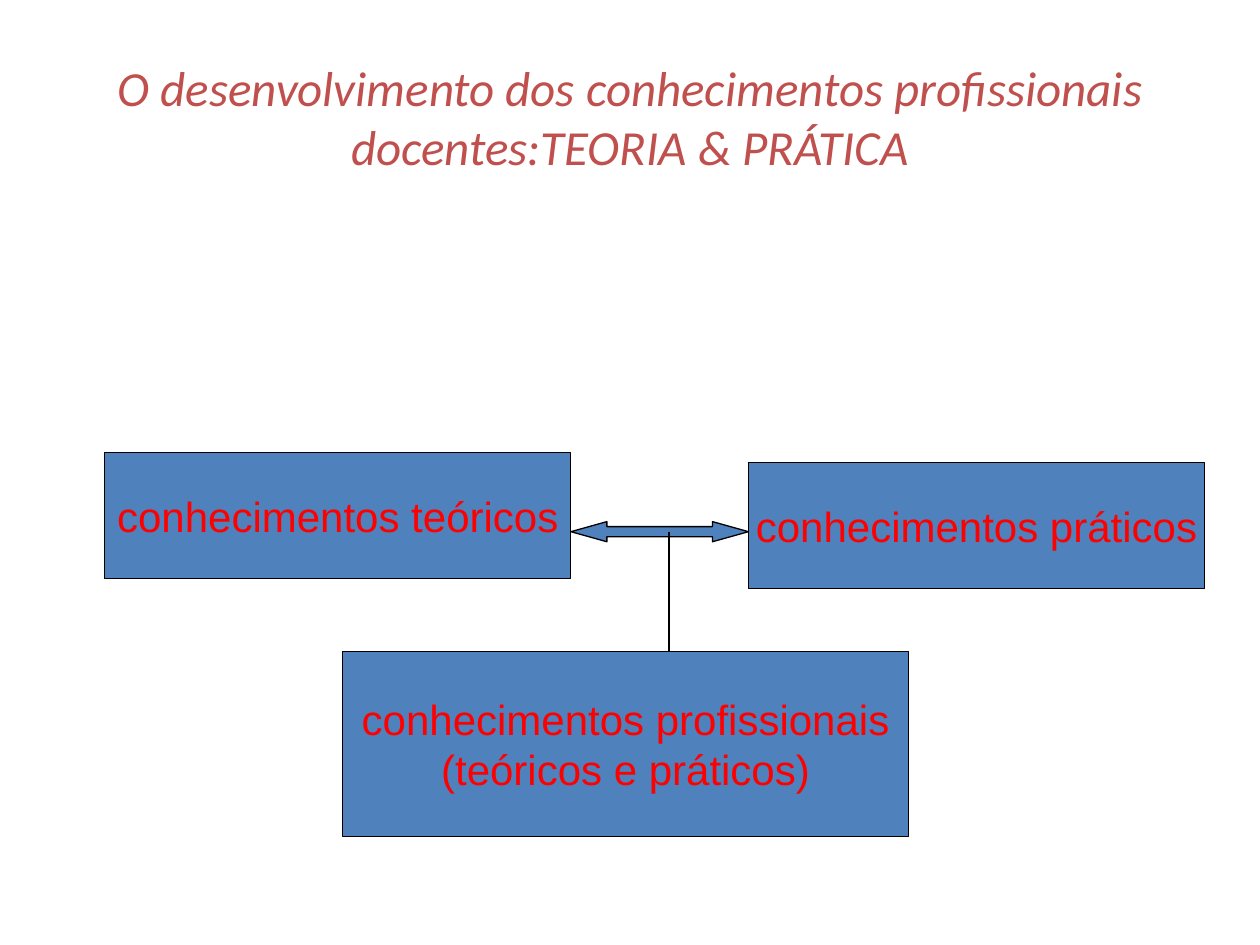
from lxml.etree import SubElement
from pptx import Presentation
from pptx.dml.color import RGBColor
from pptx.enum.shapes import MSO_CONNECTOR as Link, MSO_SHAPE as Shape
from pptx.enum.text import MSO_ANCHOR as Anchor, PP_ALIGN as Align
from pptx.oxml.ns import qn
from pptx.util import Pt

COLORS = {"title": "C0504D", "fill": "4F81BD", "outline": "000000", "label": "FF0000"}
TITLE = "O desenvolvimento dos conhecimentos profissionais docentes:TEORIA & PRÁTICA"
KNOWLEDGE = {
    "theory": (["conhecimentos teóricos"], (59.8, 258.5, 266.4, 72)),
    "practice": (["conhecimentos práticos"], (427.7, 264.2, 260.6, 72)),
    "professional": (["conhecimentos profissionais", "(teóricos e práticos)"],
                     (195.8, 372.2, 323.3, 105.8)),
}
ARROW_TOP, ARROW_HEIGHT = 298.1, 11.5
LINK_X = 382.3


def color(name):
    return RGBColor.from_string(COLORS[name])


def outline(line):
    line.color.rgb = color("outline")
    line.width = Pt(0.75)


def write(frame, lines, font_name, size, ink, italic=False):
    frame.vertical_anchor = Anchor.MIDDLE
    for index, line in enumerate(lines):
        paragraph = frame.add_paragraph() if index else frame.paragraphs[0]
        paragraph.alignment = Align.CENTER
        run = paragraph.add_run()
        run.text = line
        run.font.name, run.font.size = font_name, Pt(size)
        run.font.italic = italic
        run.font.color.rgb = color(ink)


def add_block(slide, preset, area):
    block = slide.shapes.add_shape(preset, *map(Pt, area))
    block.shadow.inherit = False
    block.fill.solid()
    block.fill.fore_color.rgb = color("fill")
    outline(block.line)
    return block


def main():
    deck = Presentation()
    deck.slide_width, deck.slide_height = Pt(720), Pt(540)
    slide = deck.slides.add_slide(deck.slide_layouts[6])

    heading = slide.shapes.add_textbox(Pt(36), Pt(21.6), Pt(648), Pt(90)).text_frame
    heading.word_wrap = True
    write(heading, [TITLE], "Calibri", 28, "title", italic=True)

    for lines, area in KNOWLEDGE.values():
        frame = add_block(slide, Shape.RECTANGLE, area).text_frame
        frame.word_wrap = False
        write(frame, lines, "Arial", 24, "label")

    theory, practice, professional = (area for _, area in KNOWLEDGE.values())
    arrow_left = theory[0] + theory[2]
    arrow = add_block(slide, Shape.LEFT_RIGHT_ARROW,
                      (arrow_left, ARROW_TOP, practice[0] - arrow_left, ARROW_HEIGHT))
    arrow.adjustments[0], arrow.adjustments[1] = 0.5, 1.79

    link = slide.shapes.add_connector(
        Link.STRAIGHT, Pt(LINK_X), Pt(ARROW_TOP + ARROW_HEIGHT / 2),
        Pt(LINK_X), Pt(professional[1]))
    outline(link.line)
    SubElement(link._element.spPr, qn("a:effectLst"))

    deck.save("out.pptx")


if __name__ == "__main__":
    main()
